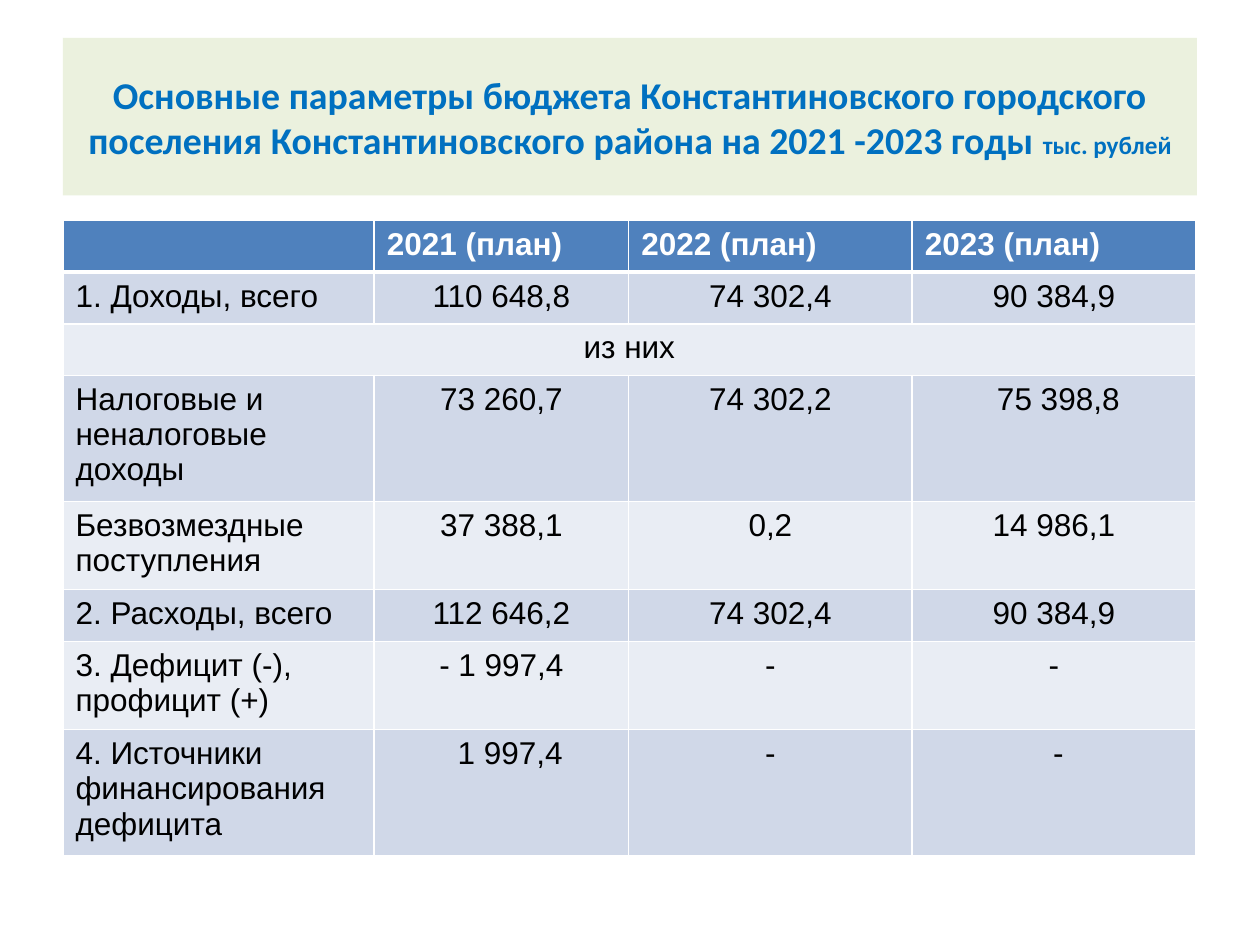
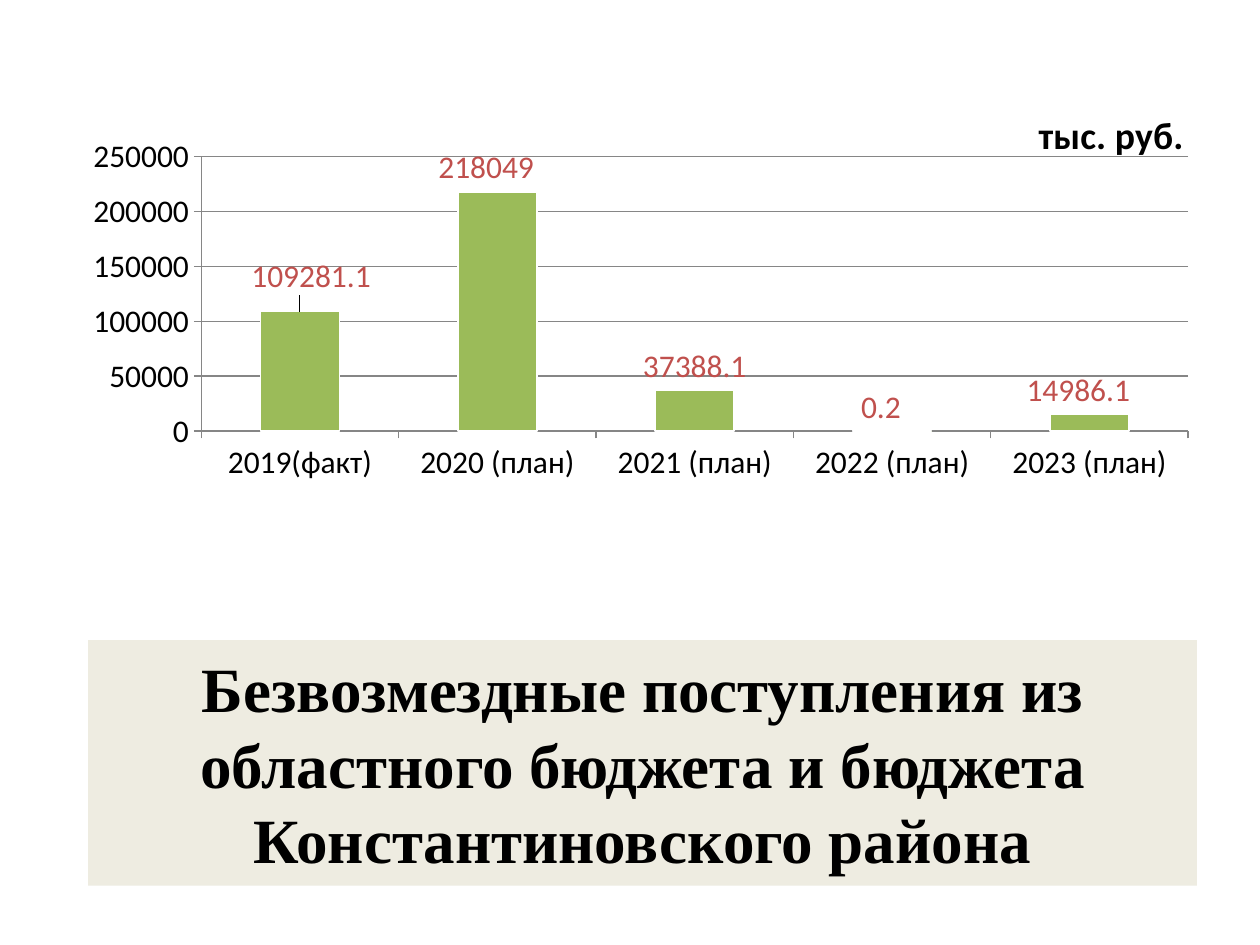
import pptx
import pptx.chart.data
import pptx.dml.color
import pptx.enum.chart
import pptx.enum.text
import pptx.oxml.ns
import pptx.util
from lxml import etree

RGBColor = pptx.dml.color.RGBColor
ALIGN = pptx.enum.text.PP_ALIGN
ANCHOR = pptx.enum.text.MSO_ANCHOR
OUTSIDE = pptx.enum.chart.XL_TICK_MARK.OUTSIDE
LABEL_END = pptx.enum.chart.XL_LABEL_POSITION.OUTSIDE_END
qn = pptx.oxml.ns.qn

WHITE = RGBColor(0xFF, 0xFF, 0xFF)
BLACK = RGBColor(0, 0, 0)
TITLE_BLUE = RGBColor(0x00, 0x70, 0xC0)
PALE_GREEN = RGBColor(0xEB, 0xF1, 0xDE)
PALE_TAN = RGBColor(0xEE, 0xEC, 0xE1)
HEADER_BLUE = RGBColor(0x4F, 0x81, 0xBD)
BANDS = [RGBColor(0xE9, 0xED, 0xF4), RGBColor(0xD0, 0xD8, 0xE8)]
BAR_GREEN = RGBColor(0x9B, 0xBB, 0x59)
LABEL_RED = RGBColor(0xC0, 0x50, 0x4D)
AXIS_GREY = RGBColor(0x86, 0x86, 0x86)

GRID_COLUMNS = 10
SLIDE_WIDTH = pptx.util.Inches(10)
SLIDE_HEIGHT = pptx.util.Inches(7.5)

COLUMN_WIDTHS = [2.47, 2.02, 2.25, 2.25]
ROW_HEIGHTS = [0.41, 0.41, 0.41, 1, 0.7, 0.41, 0.7, 1]
BUDGET = [
    ["", "2021 (план)", "2022 (план)", "2023 (план)"],
    ["1. Доходы, всего", "110 648,8", "74 302,4", "90 384,9"],
    ["из них"],
    ["Налоговые и неналоговые доходы", "73 260,7", "74 302,2", "75 398,8"],
    ["Безвозмездные поступления", "37 388,1", "0,2", "14 986,1"],
    ["2. Расходы, всего", "112 646,2", "74 302,4", "90 384,9"],
    ["3. Дефицит (-), профицит (+)", "- 1 997,4", "-", "-"],
    ["4. Источники финансирования дефицита", "1 997,4", "-", "-"],
]
EXTRA_INDENTS = {(3, 3): 0.07, (7, 1): 0.14, (7, 3): 0.07}

RECEIPTS = {
    "2019(факт)": 109281.1,
    "2020 (план)": 218049,
    "2021 (план)": 37388.1,
    "2022 (план)": 0.2,
    "2023 (план)": 14986.1,
}
LABEL_SHIFTS = {0: (0.01, -0.02), 1: (-0.01, 0), 3: (-0.01, 0), 4: (-0.01, 0)}


def grid(cells):
    return int(SLIDE_WIDTH * cells / GRID_COLUMNS)


def set_font(font, size, color, name="Calibri", bold=False):
    font.size = pptx.util.Pt(size)
    font.color.rgb = color
    font.name = name
    font.bold = bold


def add_text(para, text, align=ALIGN.LEFT, **style):
    para.alignment = align
    span = para.add_run()
    span.text = text
    set_font(span.font, **style)


def add_title(page, place, fill, spans, **style):
    box = page.shapes.add_textbox(*map(grid, place))
    box.fill.solid()
    box.fill.fore_color.rgb = fill
    frame = box.text_frame
    frame.word_wrap = True
    frame.vertical_anchor = ANCHOR.MIDDLE
    for text, size in spans:
        add_text(frame.paragraphs[0], text, ALIGN.CENTER, size=size, bold=True, **style)


def set_borders(cell, row):
    widths = {"lnL": 1, "lnR": 1, "lnT": 3 if row == 1 else 1, "lnB": 3 if row == 0 else 1}
    properties = cell._tc.get_or_add_tcPr()
    for index, (side, width) in enumerate(widths.items()):
        line = etree.Element(qn("a:" + side), w=str(pptx.util.Pt(width)))
        fill = etree.SubElement(line, qn("a:solidFill"))
        etree.SubElement(fill, qn("a:srgbClr"), val=str(WHITE))
        properties.insert(index, line)


def add_budget_table(page, left, top):
    place = (left, top, sum(COLUMN_WIDTHS), sum(ROW_HEIGHTS))
    frame = page.shapes.add_table(len(ROW_HEIGHTS), len(COLUMN_WIDTHS), *map(grid, place))
    table = frame.table
    for column, width in zip(table.columns, COLUMN_WIDTHS):
        column.width = grid(width)
    for row, height in enumerate(ROW_HEIGHTS):
        table.rows[row].height = grid(height)
        values = BUDGET[row]
        for column in range(len(COLUMN_WIDTHS)):
            cell = table.cell(row, column)
            cell.fill.solid()
            cell.fill.fore_color.rgb = BANDS[row % 2] if row else HEADER_BLUE
            set_borders(cell, row)
            cell.margin_left = grid(0.1 + EXTRA_INDENTS.get((row, column), 0))
            if column < len(values) and values[column]:
                centred = row and (column or len(values) == 1)
                add_text(cell.text_frame.paragraphs[0], values[column],
                         ALIGN.CENTER if centred else ALIGN.LEFT, size=18, name="Arial",
                         color=BLACK if row else WHITE, bold=row == 0)
        if len(values) == 1:
            table.cell(row, 0).merge(table.cell(row, len(COLUMN_WIDTHS) - 1))


def set_layout(parent, index, **settings):
    for old in parent.findall(qn("c:layout")):
        parent.remove(old)
    layout = etree.Element(qn("c:layout"))
    manual = etree.SubElement(layout, qn("c:manualLayout"))
    for name, value in settings.items():
        etree.SubElement(manual, qn("c:" + name), val=str(value))
    parent.insert(index, layout)


def style_axis(axis):
    axis.major_tick_mark = OUTSIDE
    axis.minor_tick_mark = pptx.enum.chart.XL_TICK_MARK.NONE
    axis.format.line.color.rgb = AXIS_GREY
    set_font(axis.tick_labels.font, 18, BLACK)


def style_labels(labels):
    labels.position = LABEL_END
    set_font(labels.font, 18, LABEL_RED)


def add_receipts_chart(page, place):
    data = pptx.chart.data.CategoryChartData()
    data.categories = list(RECEIPTS)
    data.add_series("Series 1", list(RECEIPTS.values()))
    kind = pptx.enum.chart.XL_CHART_TYPE.COLUMN_CLUSTERED
    chart = page.shapes.add_chart(kind, *map(grid, place), data).chart
    set_font(chart.font, 18, BLACK)
    chart.has_legend = False
    chart.has_title = True
    add_text(chart.chart_title.text_frame.paragraphs[0], "тыс. руб.",
             size=21.6, color=BLACK, bold=True)
    set_layout(chart.element.find(".//" + qn("c:title")), 1,
               xMode="edge", yMode="edge", x=0.86, y=0.07)
    set_layout(chart.element.find(".//" + qn("c:plotArea")), 0, layoutTarget="inner",
               xMode="edge", yMode="edge", x=0.116, y=0.169, w=0.884, h=0.495)
    style_axis(chart.category_axis)
    style_axis(chart.value_axis)
    chart.value_axis.minimum_scale = 0
    chart.value_axis.maximum_scale = 250000
    chart.value_axis.major_unit = 50000
    chart.value_axis.has_major_gridlines = True
    chart.value_axis.major_gridlines.format.line.color.rgb = AXIS_GREY

    plot = chart.plots[0]
    plot.vary_by_categories = False
    plot.gap_width = 150
    series = plot.series[0]
    series.invert_if_negative = False
    series.format.fill.solid()
    series.format.fill.fore_color.rgb = BAR_GREEN
    series.format.line.color.rgb = WHITE
    series.format.line.width = pptx.util.Pt(1)
    series.data_labels.show_value = True
    style_labels(series.data_labels)
    for index in LABEL_SHIFTS:
        style_labels(series.points[index].data_label)
    labels = chart.element.findall(".//" + qn("c:dLbl"))
    for label, (x, y) in zip(labels, LABEL_SHIFTS.values()):
        set_layout(label, 1, x=x, y=y)


def main():
    deck = pptx.Presentation()
    deck.slide_width, deck.slide_height = SLIDE_WIDTH, SLIDE_HEIGHT
    blank = deck.slide_layouts[6]

    page = deck.slides.add_slide(blank)
    add_title(page, (0.5, 0.3, 9, 1.25), PALE_GREEN, [
        ("Основные параметры бюджета Константиновского городского поселения "
         "Константиновского района на 2021 -2023 годы ", 21.6),
        ("тыс. рублей", 14.4),
    ], color=TITLE_BLUE)
    add_budget_table(page, 0.5, 1.75)

    page = deck.slides.add_slide(blank)
    add_title(page, (0.7, 5.08, 8.8, 1.95), PALE_TAN, [
        ("Безвозмездные поступления из областного бюджета и бюджета "
         "Константиновского района", 36),
    ], color=BLACK, name="Times New Roman")
    add_receipts_chart(page, (0.57, 0.5, 8.88, 4.4))

    deck.save("out.pptx")


if __name__ == "__main__":
    main()
